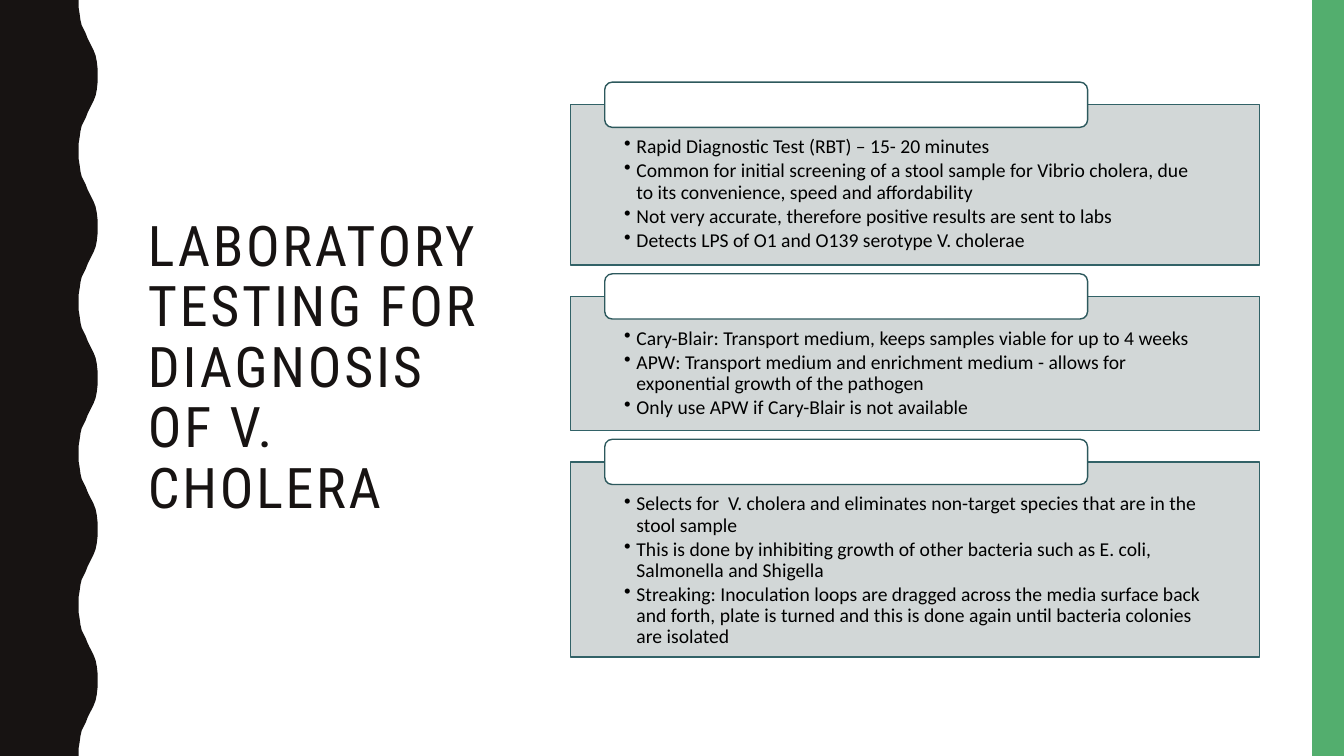
from dataclasses import dataclass

import lxml.etree
import pptx
import pptx.dml.color
import pptx.enum.shapes
import pptx.enum.text
import pptx.oxml.ns
import pptx.util

Cm = pptx.util.Cm
Pt = pptx.util.Pt
RGBColor = pptx.dml.color.RGBColor
SHAPE = pptx.enum.shapes.MSO_SHAPE
ANCHOR = pptx.enum.text.MSO_ANCHOR
ALIGN = pptx.enum.text.PP_ALIGN
qn = pptx.oxml.ns.qn

INK = RGBColor(0x17, 0x13, 0x12)
GREEN = RGBColor(0x53, 0xAE, 0x6E)
WHITE = RGBColor(0xFF, 0xFF, 0xFF)
BLACK = RGBColor(0x00, 0x00, 0x00)
PANEL_FILL = RGBColor(0xCE, 0xD3, 0xD3)
PANEL_LINE = RGBColor(0x32, 0x62, 0x67)
TAB_LINE = RGBColor(0x2D, 0x59, 0x5D)

PAGE_WIDTH, PAGE_HEIGHT = 33.87, 19.05
WAVE_COUNT = 5
WAVE_PERIOD = PAGE_HEIGHT / WAVE_COUNT
# Outward half of one wave: (x, y) in centimetres
WAVE_RISE = [(1.98, 0), (1.98, 0.18), (2.01, 0.36), (2.03, 0.51), (2.06, 0.64),
             (2.11, 0.74), (2.16, 0.84), (2.21, 0.97), (2.26, 1.07),
             (2.31, 1.17), (2.36, 1.27), (2.41, 1.4), (2.44, 1.55),
             (2.46, 1.73), (2.46, 1.9)]

PANEL_LEFT, PANEL_WIDTH, PANEL_GAP = 14.38, 17.37, 0.79
FIRST_PANEL_TOP = 2.64
TAB_LEFT, TAB_WIDTH, TAB_HEIGHT, TAB_RISE = 15.24, 12.17, 1.14, 0.57
BULLET_INDENT = Cm(0.31)

TITLE_FONT = {"name": "Roboto Condensed", "size": Pt(40)}
BODY_FONT = {"name": "Calibri", "size": Pt(14)}
TITLE_FRAME = {"word_wrap": True, "vertical_anchor": ANCHOR.MIDDLE}
PANEL_FRAME = {"word_wrap": True, "vertical_anchor": ANCHOR.TOP,
               "margin_left": Cm(1.35), "margin_right": Cm(1.35),
               "margin_top": Cm(0.81), "margin_bottom": Cm(0.28)}
BULLET_FORMAT = {"alignment": ALIGN.LEFT, "line_spacing": 0.9,
                 "space_after": Pt(2)}


@dataclass
class Panel:
    height: float
    bullets: list[str]


PANELS = [
    Panel(4.04, [
        "Rapid Diagnostic Test (RBT) – 15- 20 minutes",
        "Common for initial screening of a stool sample for Vibrio cholera, "
        "due to its convenience, speed and affordability",
        "Not very accurate, therefore positive results are sent to labs",
        "Detects LPS of O1 and O139 serotype V. cholerae",
    ]),
    Panel(3.38, [
        "Cary-Blair: Transport medium, keeps samples viable for up to 4 weeks",
        "APW: Transport medium and enrichment medium - allows for "
        "exponential growth of the pathogen",
        "Only use APW if Cary-Blair is not available",
    ]),
    Panel(4.92, [
        "Selects for  V. cholera and eliminates non-target species that are "
        "in the stool sample",
        "This is done by inhibiting growth of other bacteria such as E. coli, "
        "Salmonella and Shigella",
        "Streaking: Inoculation loops are dragged across the media surface "
        "back and forth, plate is turned and this is done again until "
        "bacteria colonies are isolated",
    ]),
]


def apply_format(target: object, values: dict) -> None:
    for name, value in values.items():
        setattr(target, name, value)


def paint(shape, fill: RGBColor, line: RGBColor | None = None) -> None:
    shape.shadow.inherit = False
    shape.fill.solid()
    shape.fill.fore_color.rgb = fill
    if line is None:
        shape.line.fill.background()
    else:
        shape.line.color.rgb = line
        shape.line.width = Pt(1)


def add_block(page, kind, left: float, top: float, width: float,
              height: float, fill: RGBColor, line: RGBColor | None = None):
    block = page.shapes.add_shape(kind, Cm(left), Cm(top), Cm(width), Cm(height))
    paint(block, fill, line)
    return block


def add_span(para, text: str, font: dict, color: RGBColor):
    span = para.add_run()
    span.text = text
    apply_format(span.font, font)
    span.font.color.rgb = color
    return span


def add_wave(page) -> None:
    fall = [(x, WAVE_PERIOD - y) for x, y in reversed(WAVE_RISE)]
    edge = [(Cm(x), Cm(y + number * WAVE_PERIOD))
            for number in range(WAVE_COUNT) for x, y in WAVE_RISE + fall]
    builder = page.shapes.build_freeform(0, 0)
    builder.add_line_segments(edge + [(0, Cm(PAGE_HEIGHT))], close=True)
    paint(builder.convert_to_shape(), INK)


def add_title(page) -> None:
    box = page.shapes.add_textbox(Cm(3.48), Cm(1.8), Cm(9.4), Cm(15.01))
    apply_format(box.text_frame, TITLE_FRAME)
    para = box.text_frame.paragraphs[0]
    para.line_spacing = 0.9
    span = add_span(para, "LABORATORY TESTING FOR DIAGNOSIS OF V. CHOLERA",
                    TITLE_FONT, INK)
    span.font._element.set("spc", "200")


def add_bullet(para, text: str) -> None:
    properties = para._p.get_or_add_pPr()
    properties.set("marL", str(BULLET_INDENT))
    properties.set("indent", str(-BULLET_INDENT))
    lxml.etree.SubElement(properties, qn("a:buChar")).set("char", "•")
    apply_format(para, BULLET_FORMAT)
    add_span(para, text, BODY_FONT, BLACK)


def add_panel(page, panel: Panel, top: float) -> None:
    block = add_block(page, SHAPE.RECTANGLE, PANEL_LEFT, top, PANEL_WIDTH,
                      panel.height, PANEL_FILL, PANEL_LINE)
    color = block._element.spPr.find(qn("a:solidFill"))[0]
    lxml.etree.SubElement(color, qn("a:alpha")).set("val", "90000")
    frame = block.text_frame
    apply_format(frame, PANEL_FRAME)
    for number, text in enumerate(panel.bullets):
        para = frame.add_paragraph() if number else frame.paragraphs[0]
        add_bullet(para, text)
    add_block(page, SHAPE.ROUNDED_RECTANGLE, TAB_LEFT, top - TAB_RISE,
              TAB_WIDTH, TAB_HEIGHT, WHITE, TAB_LINE)


def main() -> None:
    deck = pptx.Presentation()
    deck.slide_width, deck.slide_height = Cm(PAGE_WIDTH), Cm(PAGE_HEIGHT)
    page = deck.slides.add_slide(deck.slide_layouts[6])

    # Side decoration
    add_wave(page)
    add_block(page, SHAPE.RECTANGLE, 33.07, 0, 0.8, PAGE_HEIGHT, GREEN)

    # Title and stacked panels
    add_title(page)
    top = FIRST_PANEL_TOP
    for panel in PANELS:
        add_panel(page, panel, top)
        top += panel.height + PANEL_GAP

    deck.save("out.pptx")


if __name__ == "__main__":
    main()
